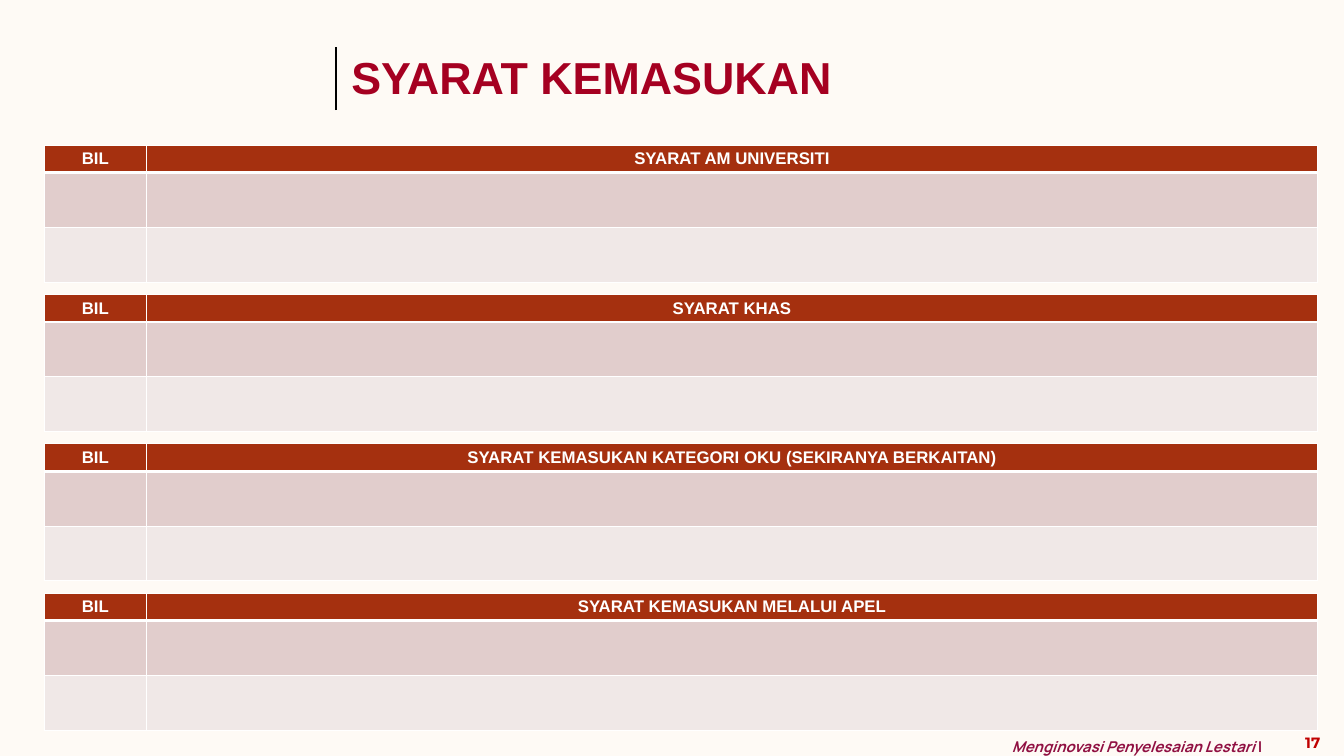
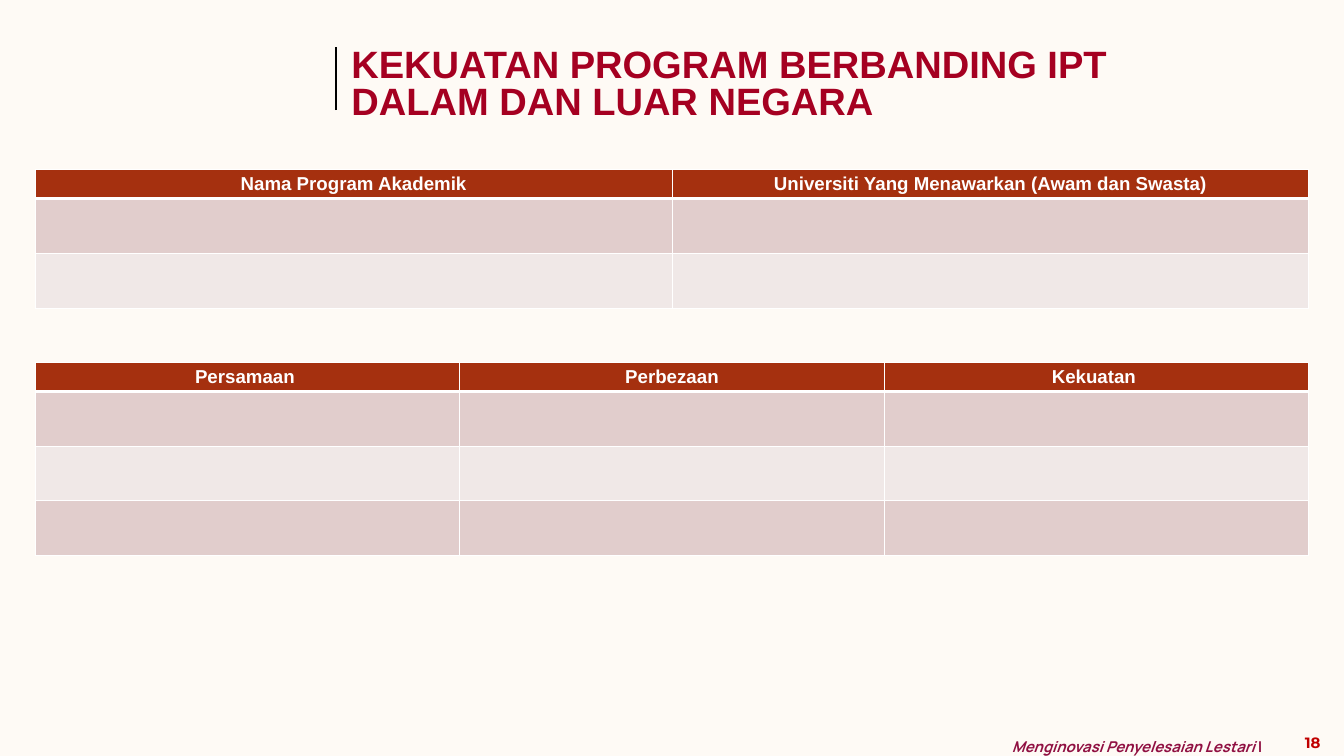
from dataclasses import dataclass

from lxml.etree import SubElement
from pptx import Presentation
from pptx.dml.color import RGBColor
from pptx.enum.shapes import MSO_CONNECTOR
from pptx.enum.text import MSO_ANCHOR as Anchor, PP_ALIGN as Align
from pptx.oxml.ns import qn
from pptx.presentation import Presentation as Deck
from pptx.slide import Slide
from pptx.table import _Cell as Cell
from pptx.text.text import TextFrame
from pptx.util import Inches, Pt

SLIDE_WIDTH, SLIDE_HEIGHT = Inches(20), Inches(11.25)

CREAM = RGBColor(0xFE, 0xFA, 0xF5)
BLACK = RGBColor(0x00, 0x00, 0x00)
WHITE = RGBColor(0xFF, 0xFF, 0xFF)
CRIMSON = RGBColor(0xA5, 0x00, 0x21)
PLUM = RGBColor(0x90, 0x10, 0x42)
RED = RGBColor(0xC0, 0x00, 0x00)
RUST = RGBColor(0xA5, 0x30, 0x0F)
BANDS = (RGBColor(0xE1, 0xCD, 0xCC), RGBColor(0xF0, 0xE8, 0xE7))

# Lengths are percent of the slide's width (columns) and height (rows).
TABLE_WIDTH = 94.75
HEADER_ROW, BODY_ROW = 3.64, 7.24
BIL_SHARE = 0.08
REQUIREMENTS_LEFT, REQUIREMENTS_TOP, REQUIREMENTS_STEP = 3.3, 19.2, 19.75
CENTRED_LEFT = (100 - TABLE_WIDTH) / 2


@dataclass(frozen=True)
class Area:
    left: float
    top: float
    width: float
    height: float


@dataclass(frozen=True)
class Title:
    text: str
    size: float = 48
    spacing: float | None = None


@dataclass(frozen=True)
class BandedTable:
    headings: tuple[str, ...]
    left: float
    top: float
    shares: tuple[float, ...]
    body_rows: int = 2
    size: float = 18


@dataclass(frozen=True)
class Page:
    number: int
    title: Title
    tables: tuple[BandedTable, ...]


TITLE_AREA = Area(25.65, 6.13, 63.9, 11.11)
MOTTO_AREA = Area(75.3, 96.62, 21, 3.38)
NUMBER_AREA = Area(95.35, 96.62, 4.65, 3.29)
TITLE_RULE = Area(25, 6.22, 0, 8.36)

REQUIREMENTS = (
    "SYARAT AM UNIVERSITI",
    "SYARAT KHAS",
    "SYARAT KEMASUKAN KATEGORI OKU (SEKIRANYA BERKAITAN)",
    "SYARAT KEMASUKAN MELALUI APEL",
)

PAGES = (
    Page(
        17,
        Title("SYARAT KEMASUKAN"),
        tuple(
            BandedTable(
                ("BIL", requirement),
                REQUIREMENTS_LEFT,
                REQUIREMENTS_TOP + index * REQUIREMENTS_STEP,
                (BIL_SHARE, 1 - BIL_SHARE),
            )
            for index, requirement in enumerate(REQUIREMENTS)
        ),
    ),
    Page(
        18,
        Title("KEKUATAN PROGRAM BERBANDING IPT DALAM DAN LUAR NEGARA", 40.8, 0.8),
        (
            BandedTable(
                ("Nama Program Akademik", "Universiti Yang Menawarkan (Awam dan Swasta)"),
                CENTRED_LEFT, 22.4, (1 / 2,) * 2, size=20,
            ),
            BandedTable(
                ("Persamaan ", "Perbezaan", "Kekuatan "),
                CENTRED_LEFT, 47.9, (1 / 3,) * 3, body_rows=3, size=20,
            ),
        ),
    ),
)


def across(columns: float) -> int:
    return round(SLIDE_WIDTH * columns / 100)


def down(rows: float) -> int:
    return round(SLIDE_HEIGHT * rows / 100)


def write(
    frame: TextFrame,
    text: str,
    *,
    size: float,
    color: RGBColor,
    font: str = "Arial",
    italic: bool = False,
    align: Align = Align.LEFT,
    spacing: float | None = None,
) -> None:
    """Append a bold run to the frame's first paragraph."""
    paragraph = frame.paragraphs[0]
    paragraph.alignment = align
    paragraph.line_spacing = spacing
    run = paragraph.add_run()
    run.text = text
    run.font.name = font
    run.font.size = Pt(size)
    run.font.bold = True
    run.font.italic = italic
    run.font.color.rgb = color


def add_text_area(slide: Slide, area: Area, inset: bool = True) -> TextFrame:
    box = slide.shapes.add_textbox(
        across(area.left), down(area.top), across(area.width), down(area.height)
    )
    frame = box.text_frame
    frame.word_wrap = True
    if not inset:
        frame.margin_left = frame.margin_right = 0
        frame.margin_top = frame.margin_bottom = 0
    return frame


def draw_title_rule(slide: Slide) -> None:
    x = across(TITLE_RULE.left)
    rule = slide.shapes.add_connector(
        MSO_CONNECTOR.STRAIGHT,
        x, down(TITLE_RULE.top + TITLE_RULE.height), x, down(TITLE_RULE.top),
    )
    rule.line.color.rgb = BLACK
    rule.line.width = Pt(3)
    SubElement(rule.element.spPr, qn("a:effectLst"))


def draw_footer(slide: Slide, number: int) -> None:
    motto = add_text_area(slide, MOTTO_AREA, inset=False)
    for text, italic in (("Menginovasi Penyelesaian Lestari ", True), ("|", False)):
        write(motto, text, size=16, color=PLUM, font="Manrope", italic=italic, spacing=1.4)
    write(
        add_text_area(slide, NUMBER_AREA), str(number),
        size=16, color=RED, font="Montserrat", align=Align.CENTER,
    )


def set_borders(cell: Cell, top: float = 1, bottom: float = 1) -> None:
    """Add white borders, with widths in points; call before filling the cell."""
    properties = cell._tc.get_or_add_tcPr()
    for side, width in (("L", 1), ("R", 1), ("T", top), ("B", bottom)):
        line = SubElement(properties, qn(f"a:ln{side}"), w=str(Pt(width)))
        fill = SubElement(line, qn("a:solidFill"))
        SubElement(fill, qn("a:srgbClr"), val=str(WHITE))


def draw_table(slide: Slide, spec: BandedTable) -> None:
    heights = [HEADER_ROW] + [BODY_ROW] * spec.body_rows
    table = slide.shapes.add_table(
        len(heights), len(spec.headings),
        across(spec.left), down(spec.top), across(TABLE_WIDTH), down(sum(heights)),
    ).table
    for column, share in zip(table.columns, spec.shares):
        column.width = across(TABLE_WIDTH * share)
    for index, (row, height) in enumerate(zip(table.rows, heights)):
        row.height = down(height)
        for cell, heading in zip(row.cells, spec.headings):
            is_header = index == 0
            set_borders(cell, top=3 if index == 1 else 1, bottom=3 if is_header else 1)
            cell.fill.solid()
            cell.fill.fore_color.rgb = RUST if is_header else BANDS[(index - 1) % 2]
            if is_header:
                cell.vertical_anchor = Anchor.MIDDLE
                write(cell.text_frame, heading, size=spec.size, color=WHITE, align=Align.CENTER)


def draw_page(deck: Deck, page: Page) -> None:
    slide = deck.slides.add_slide(deck.slide_layouts[6])
    draw_footer(slide, page.number)
    draw_title_rule(slide)
    for table in page.tables:
        draw_table(slide, table)
    title = page.title
    write(
        add_text_area(slide, TITLE_AREA), title.text,
        size=title.size, color=CRIMSON, spacing=title.spacing,
    )


def main() -> None:
    deck = Presentation()
    deck.slide_width, deck.slide_height = SLIDE_WIDTH, SLIDE_HEIGHT
    backdrop = deck.slide_master.background.fill
    backdrop.solid()
    backdrop.fore_color.rgb = CREAM
    for page in PAGES:
        draw_page(deck, page)
    deck.save("out.pptx")


if __name__ == "__main__":
    main()
